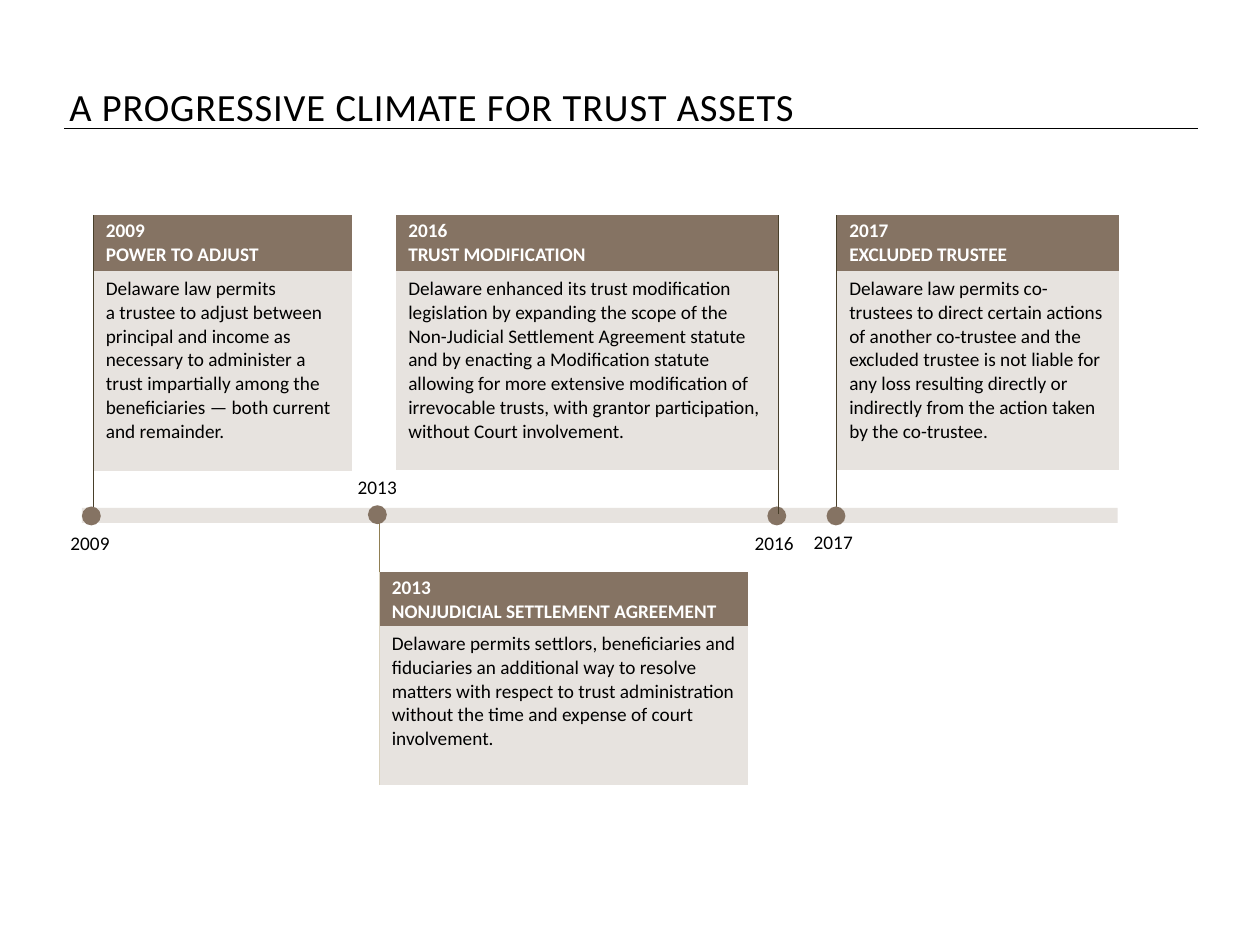
"""Build a timeline slide of trust law milestones."""
from dataclasses import dataclass

from lxml.etree import SubElement
from pptx import Presentation
from pptx.dml.color import RGBColor
from pptx.enum.shapes import MSO_CONNECTOR, MSO_SHAPE
from pptx.enum.text import MSO_ANCHOR, PP_ALIGN
from pptx.oxml import parse_xml
from pptx.oxml.ns import nsdecls, qn
from pptx.util import Inches, Pt


@dataclass(frozen=True)
class Theme:
    font: str = "Calibri"
    black: str = "000000"
    white: str = "FFFFFF"
    brown: str = "857363"
    sand: str = "E7E3DF"
    dark_rule: str = "483F2A"
    gold_rule: str = "907F54"
    pale_rule: str = "DAD3C0"
    title_size: float = 22
    text_size: float = 11


@dataclass(frozen=True)
class Grid:
    columns: int = 100
    rows: int = 75
    width: int = Inches(10)
    height: int = Inches(7.5)

    def across(self, columns: float) -> int:
        return round(self.width * columns / self.columns)

    def down(self, rows: float) -> int:
        return round(self.height * rows / self.rows)

    def box(self, left: float, top: float, width: float, height: float) -> tuple:
        return self.across(left), self.down(top), self.across(width), self.down(height)


@dataclass(frozen=True)
class Row:
    height: float
    rule: str
    lines: tuple = ()
    fill: str = ""
    color: str = ""
    bold: bool = False
    anchor: MSO_ANCHOR = MSO_ANCHOR.TOP
    margins: tuple = (0.1, 0, 0.1, 0)


@dataclass(frozen=True)
class Milestone:
    year: str
    heading: str
    body: str
    left: float
    top: float
    width: float
    body_height: float
    stem_height: float
    side: str = "L"
    rule_width: float = 0.25
    stem_above: bool = False


@dataclass(frozen=True)
class Marker:
    year: str
    left: float
    top: float
    label_left: float
    label_top: float
    align: PP_ALIGN = PP_ALIGN.LEFT


THEME = Theme()
GRID = Grid()
NO_GRID_STYLE = "{2D5ABB26-0587-4C30-8999-92F81FD0307C}"

MILESTONES = (
    Milestone("2013", "NONJUDICIAL SETTLEMENT AGREEMENT",
              "Delaware permits settlors, beneficiaries and fiduciaries an additional way to "
              "resolve matters with respect to trust administration without the time and "
              "expense of court involvement.",
              30.1, 41, 29.3, 12.6, 4.4, rule_width=0.5, stem_above=True),
    Milestone("2017", "EXCLUDED TRUSTEE",
              "Delaware law permits co-trustees to direct certain actions of another co-trustee "
              "and the excluded trustee is not liable for any loss resulting directly or "
              "indirectly from the action taken by the co-trustee.",
              66.4, 17.1, 22.4, 15.8, 3),
    Milestone("2009", "POWER TO ADJUST",
              "Delaware law permits \va trustee to adjust between principal and income as "
              "necessary to administer a trust impartially among the beneficiaries — both "
              "current and remainder.",
              7.4, 17.1, 20.5, 15.9, 2.9),
    Milestone("2016", "TRUST MODIFICATION",
              "Delaware enhanced its trust modification legislation by expanding the scope of "
              "the Non-Judicial Settlement Agreement statute and by enacting a Modification "
              "statute allowing for more extensive modification of irrevocable trusts, with "
              "grantor participation, without Court involvement.",
              31.4, 17.1, 30.4, 15.8, 3.5, side="R"),
)

MARKERS = (
    Marker("2009", 6.5, 40.2, 4.3, 41.7, PP_ALIGN.CENTER),
    Marker("2013", 29.2, 40.1, 27.1, 37.2, PP_ALIGN.CENTER),
    Marker("2016", 60.9, 40.2, 58.9, 41.7),
    Marker("2017", 65.6, 40.2, 63.6, 41.6),
)


def write(frame, lines: tuple, color: str, size: float, bold: bool = False,
          align: PP_ALIGN = PP_ALIGN.LEFT) -> None:
    for index, line in enumerate(lines):
        paragraph = frame.add_paragraph() if index else frame.paragraphs[0]
        paragraph.text = line
        paragraph.alignment = align
        for run in paragraph.runs:
            for name, value in {"name": THEME.font, "size": Pt(size), "bold": bold}.items():
                setattr(run.font, name, value)
            run.font.color.rgb = RGBColor.from_string(color)


def add_label(slide, box: tuple, text: str, size: float, align: PP_ALIGN = PP_ALIGN.LEFT,
              **formats):
    frame = slide.shapes.add_textbox(*box).text_frame
    for name, value in {"word_wrap": True, **formats}.items():
        setattr(frame, name, value)
    write(frame, (text,), THEME.black, size, align=align)
    return frame.paragraphs[0]


def add_solid(slide, kind: MSO_SHAPE, box: tuple, color: str) -> None:
    shape = slide.shapes.add_shape(kind, *box)
    shape.shadow.inherit = False
    shape.fill.solid()
    shape.fill.fore_color.rgb = RGBColor.from_string(color)
    shape.line.fill.background()


def format_cell(cell, row: Row, side: str, rule_width: float) -> None:
    cell.vertical_anchor = row.anchor
    for name, margin in zip(("left", "top", "right", "bottom"), row.margins):
        setattr(cell, f"margin_{name}", Inches(margin))
    if row.fill:
        cell.fill.solid()
        cell.fill.fore_color.rgb = RGBColor.from_string(row.fill)
        write(cell.text_frame, row.lines, row.color, THEME.text_size, row.bold)
    else:
        cell.fill.background()
        cell.text_frame.paragraphs[0]._p.get_or_add_endParaRPr().set("sz", "800")
    border = parse_xml(
        f'<a:ln{side} {nsdecls("a")} w="{Pt(rule_width)}"><a:solidFill>'
        f'<a:srgbClr val="{row.rule}"/></a:solidFill></a:ln{side}>')
    cell._tc.get_or_add_tcPr().insert(0, border)


def add_milestone(slide, item: Milestone) -> None:
    stem_rule, card_rule = ((THEME.gold_rule, THEME.pale_rule) if item.stem_above
                            else (THEME.dark_rule, THEME.dark_rule))
    header = Row(3.9 if item.stem_above else 4.4, card_rule, (item.year, item.heading),
                 THEME.brown, THEME.white, True, MSO_ANCHOR.MIDDLE, (0.1, 0.03, 0.1, 0.03))
    body = Row(item.body_height, card_rule, (item.body,), THEME.sand, THEME.black,
               margins=(0.1, 0.05, 0.1, 0.1))
    stem = Row(item.stem_height, stem_rule)
    rows = (stem, header, body) if item.stem_above else (header, body, stem)
    box = GRID.box(item.left, item.top, item.width, sum(row.height for row in rows))
    table = slide.shapes.add_table(len(rows), 1, *box).table
    table.first_row = table.horz_banding = False
    table._tbl.tblPr.find(qn("a:tableStyleId")).text = NO_GRID_STYLE
    for index, row in enumerate(rows):
        table.rows[index].height = GRID.down(row.height)
        format_cell(table.cell(index, 0), row, item.side, item.rule_width)


def add_title(slide) -> None:
    left, right, level = GRID.across(5.1), GRID.across(95.1), GRID.down(10.2)
    rule = slide.shapes.add_connector(MSO_CONNECTOR.STRAIGHT, left, level, right, level)
    rule.line.color.rgb = RGBColor.from_string(THEME.black)
    rule.line.width = Pt(0.5)
    SubElement(rule._element.spPr, qn("a:effectLst"))
    margins = {f"margin_{side}": 0 for side in ("left", "top", "right", "bottom")}
    paragraph = add_label(slide, GRID.box(5.5, 4.9, 64, 5.4),
                          "A PROGRESSIVE CLIMATE FOR TRUST ASSETS", THEME.title_size,
                          vertical_anchor=MSO_ANCHOR.BOTTOM, **margins)
    paragraph.line_spacing = 0.95
    paragraph.runs[0].font._element.set("spc", "50")


def main() -> None:
    presentation = Presentation()
    presentation.slide_width, presentation.slide_height = GRID.width, GRID.height
    slide = presentation.slides.add_slide(presentation.slide_layouts[6])
    add_title(slide)
    add_solid(slide, MSO_SHAPE.RECTANGLE, GRID.box(6.5, 40.3, 82.2, 1.2), THEME.sand)
    for item in MILESTONES[:-1]:
        add_milestone(slide, item)
    for marker in MARKERS:
        add_solid(slide, MSO_SHAPE.OVAL, GRID.box(marker.left, marker.top, 1.5, 1.5),
                  THEME.brown)
    add_milestone(slide, MILESTONES[-1])
    for marker in MARKERS:
        add_label(slide, GRID.box(marker.label_left, marker.label_top, 5.7, 2.9),
                  marker.year, THEME.text_size, marker.align)
    presentation.save("out.pptx")


if __name__ == "__main__":
    main()
